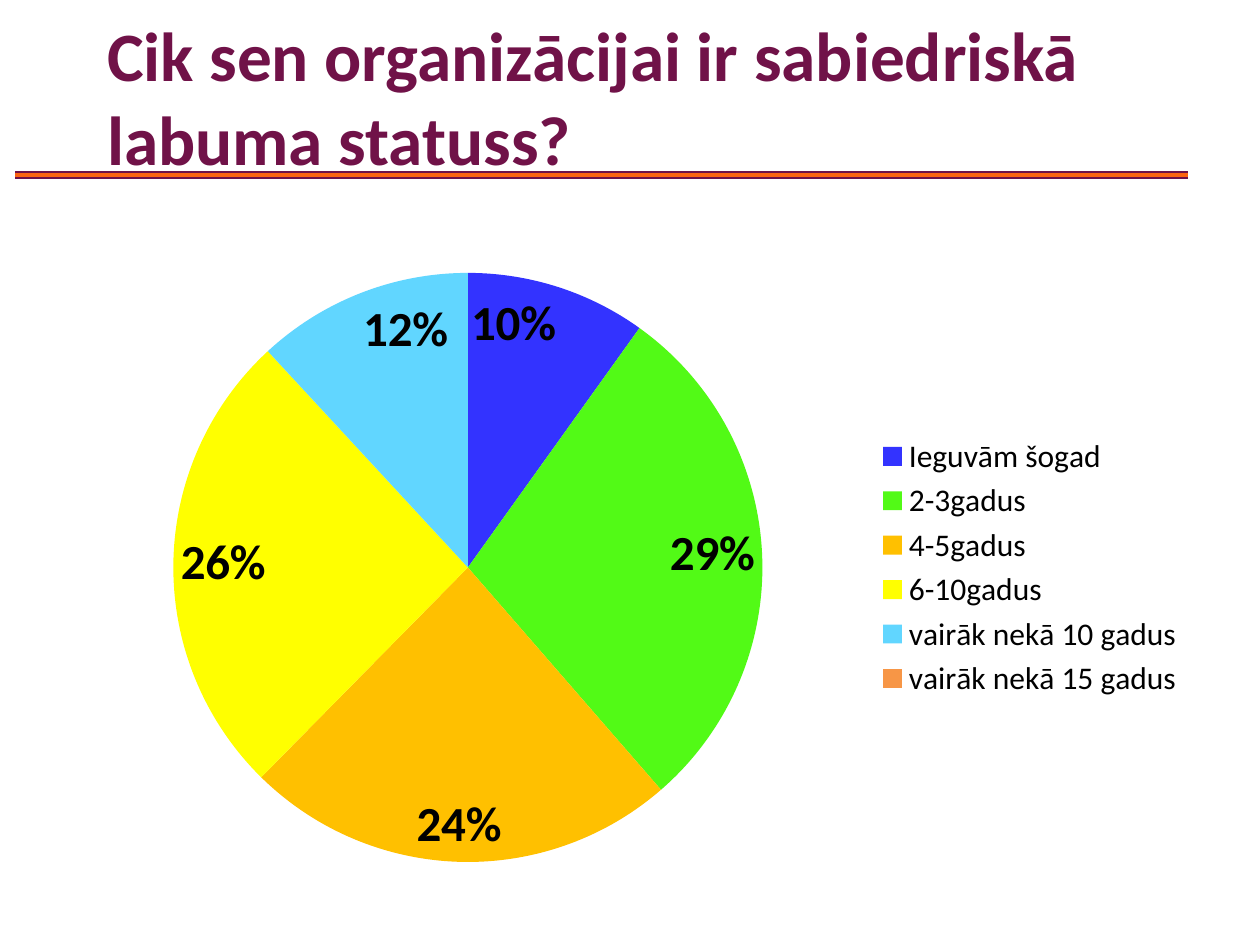
"""Build a slide with a pie chart of how long organisations have held their status."""
from dataclasses import dataclass

from lxml.etree import SubElement
from pptx import Presentation
from pptx.chart.data import CategoryChartData
from pptx.dml.color import RGBColor
from pptx.enum.chart import XL_CHART_TYPE, XL_LABEL_POSITION, XL_LEGEND_POSITION
from pptx.enum.shapes import MSO_CONNECTOR
from pptx.enum.text import MSO_ANCHOR, MSO_AUTO_SIZE, PP_ALIGN
from pptx.oxml import parse_xml
from pptx.oxml.ns import nsdecls, qn
from pptx.slide import Slide
from pptx.util import Pt

FONT = "Calibri"
PLUM = RGBColor(0x70, 0x12, 0x48)
ORANGE = RGBColor(0xFC, 0x64, 0x10)
BLACK = RGBColor(0x00, 0x00, 0x00)
BLUE = RGBColor(0x33, 0x33, 0xFF)
GREEN = RGBColor(0x52, 0xFA, 0x16)
AMBER = RGBColor(0xFF, 0xC0, 0x00)
YELLOW = RGBColor(0xFF, 0xFF, 0x00)
SKY = RGBColor(0x61, 0xD6, 0xFF)
CORAL = RGBColor(0xF7, 0x96, 0x46)


@dataclass
class Rule:
    color: RGBColor
    width: float


@dataclass
class Slice:
    name: str
    share: float
    color: RGBColor


RULES = [Rule(PLUM, 4.5), Rule(ORANGE, 2.25)]
SLICES = [
    Slice("Ieguvām šogad", 0.10, BLUE),
    Slice("2-3gadus", 0.29, GREEN),
    Slice("4-5gadus", 0.24, AMBER),
    Slice("6-10gadus", 0.26, YELLOW),
    Slice("vairāk nekā 10 gadus", 0.12, SKY),
    Slice("vairāk nekā 15 gadus", 0, CORAL),
]


def add_rule(slide: Slide, rule: Rule) -> None:
    line = slide.shapes.add_connector(
        MSO_CONNECTOR.STRAIGHT, Pt(8.64), Pt(100), Pt(679), Pt(100)
    )
    line.line.color.rgb = rule.color
    line.line.width = Pt(rule.width)
    SubElement(line._element.spPr, qn("a:effectLst"))


def fill_title(slide: Slide, text: str) -> None:
    title = slide.shapes.title
    title.left, title.top, title.width, title.height = Pt(54), Pt(9.36), Pt(625), Pt(90.7)
    frame = title.text_frame
    frame.auto_size = MSO_AUTO_SIZE.NONE
    frame.vertical_anchor = MSO_ANCHOR.MIDDLE
    para = frame.paragraphs[0]
    para.alignment = PP_ALIGN.LEFT
    span = para.add_run()
    span.text = text
    span.font.name = FONT
    span.font.size = Pt(39.6)
    span.font.bold = True
    span.font.color.rgb = PLUM


def add_pie(slide: Slide, slices: list[Slice]) -> None:
    data = CategoryChartData(number_format="0%")
    data.categories = [part.name for part in slices]
    data.add_series("Series 1", [part.share for part in slices])
    chart = slide.shapes.add_chart(
        XL_CHART_TYPE.PIE, Pt(36), Pt(146), Pt(648), Pt(356.5), data
    ).chart
    chart.has_title = False
    chart.font.name = FONT
    chart.font.size = Pt(18)
    chart.font.color.rgb = BLACK
    chart.has_legend = True
    chart.legend.position = XL_LEGEND_POSITION.RIGHT
    chart.legend.include_in_layout = False

    series = chart.plots[0].series[0]
    labels = series.data_labels
    labels.show_value = True
    labels.position = XL_LABEL_POSITION.INSIDE_END
    labels.number_format = "0%"
    labels.number_format_is_linked = False
    labels.font.name = FONT
    labels.font.size = Pt(28)
    labels.font.bold = True
    labels.font.color.rgb = BLACK
    for index, part in enumerate(slices):
        fill = series.points[index].format.fill
        fill.solid()
        fill.fore_color.rgb = part.color
        if not part.share:
            hidden = f'<c:dLbl {nsdecls("c")}><c:idx val="{index}"/><c:delete val="1"/></c:dLbl>'
            labels._element.insert(0, parse_xml(hidden))


def main() -> None:
    deck = Presentation()
    deck.slide_width, deck.slide_height = Pt(720), Pt(540)
    page = deck.slides.add_slide(deck.slide_layouts[5])
    for rule in RULES:
        add_rule(page, rule)
    fill_title(page, "Cik sen organizācijai ir sabiedriskā labuma statuss?")
    add_pie(page, SLICES)
    deck.save("out.pptx")


if __name__ == "__main__":
    main()
